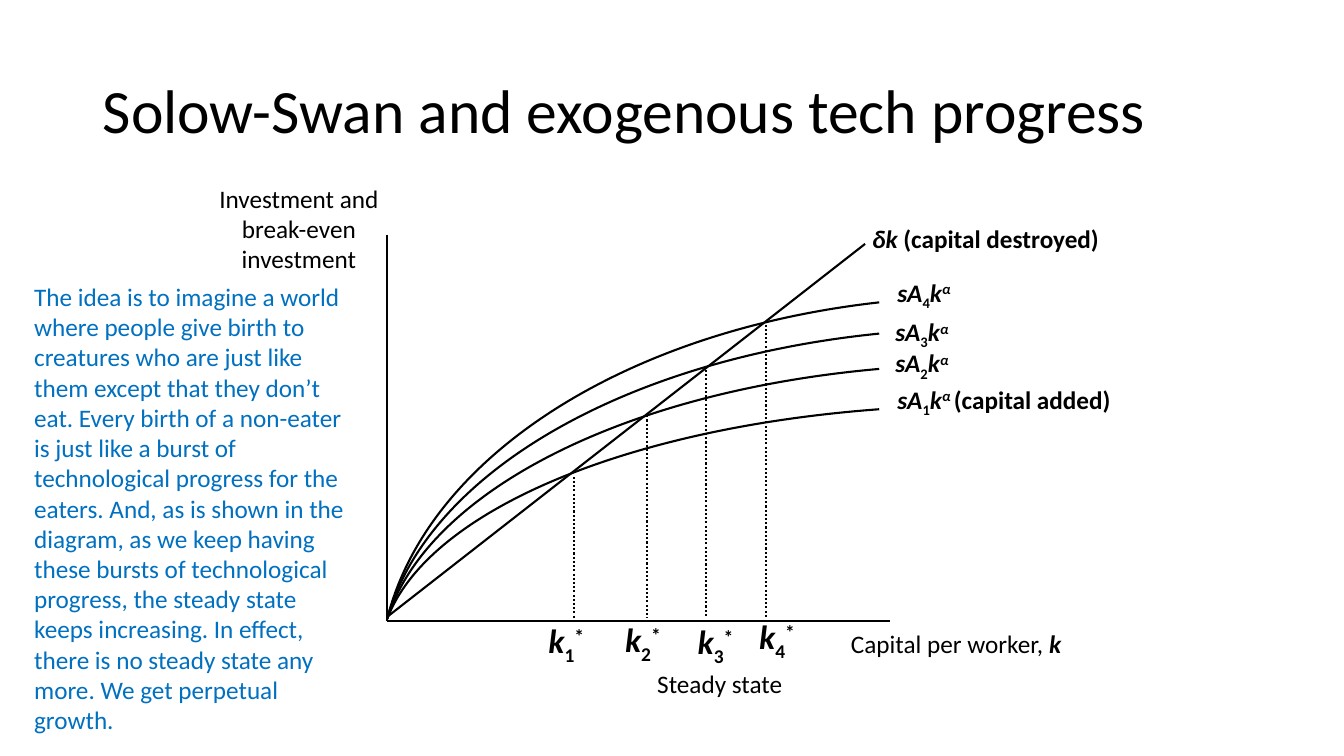
import pptx
import pptx.util
import pptx.dml.color
import pptx.enum.dml
import pptx.enum.shapes
import pptx.enum.text
import pptx.oxml
import pptx.oxml.ns
from pptx.util import Inches

COLORS = {"ink": "000000", "note": "0070C0"}
FONT = "Calibri"
ALIGN = pptx.enum.text.PP_ALIGN
ANCHOR = pptx.enum.text.MSO_ANCHOR
BOLD, ITALIC = {"bold": True}, {"bold": True, "italic": True}
SUBSCRIPT = {"bold": True, "baseline": -25000}
SUPERSCRIPT = {"bold": True, "baseline": 30000}
POWER = {"bold": True, "italic": True, "baseline": 30000}

NOTE = (
    "The idea is to imagine a world where people give birth to creatures who are just "
    "like them except that they don’t eat. Every birth of a non-eater is just like a burst "
    "of technological progress for the eaters. And, as is shown in the diagram, as we keep "
    "having these bursts of technological progress, the steady state keeps increasing. In "
    "effect, there is no steady state any more. We get perpetual growth."
)


def rgb(name):
    return pptx.dml.color.RGBColor.from_string(COLORS[name])


def format_run(run, size, color="ink", bold=False, italic=False, baseline=0):
    run.font.name = FONT
    run.font.size = pptx.util.Pt(size)
    run.font.color.rgb = rgb(color)
    run.font.bold = bold
    run.font.italic = italic
    if baseline:
        run.font._element.set("baseline", str(baseline))


def add_text(slide, box, parts, size=18, color="ink", align=ALIGN.LEFT, inset=False):
    shape = slide.shapes.add_textbox(*map(Inches, box))
    frame = shape.text_frame
    frame.word_wrap = True
    if not inset:
        frame.margin_left = frame.margin_right = frame.margin_top = frame.margin_bottom = 0
        frame.vertical_anchor = ANCHOR.MIDDLE
    paragraph = frame.paragraphs[0]
    paragraph.alignment = align
    for text, style in parts:
        run = paragraph.add_run()
        run.text = text
        format_run(run, size, color, **style)


def add_line(slide, start, end, width=1.5, dotted=False):
    connector = slide.shapes.add_connector(
        pptx.enum.shapes.MSO_CONNECTOR.STRAIGHT, *map(Inches, (*start, *end)))
    connector.line.color.rgb = rgb("ink")
    connector.line.width = pptx.util.Pt(width)
    if dotted:
        connector.line.dash_style = pptx.enum.dml.MSO_LINE.ROUND_DOT
    connector._element.spPr.append(pptx.oxml.parse_xml(
        f'<a:effectLst {pptx.oxml.ns.nsdecls("a")}/>'))


def add_curve(slide, points):
    start, *others = [tuple(map(Inches, point)) for point in points]
    builder = slide.shapes.build_freeform(*start)
    builder.add_line_segments(others, close=False)
    shape = builder.convert_to_shape()
    shape.shadow.inherit = False
    shape.fill.background()
    shape.line.color.rgb = rgb("ink")
    shape.line.width = pptx.util.Pt(1.5)
    segments = shape._element.xpath(".//a:lnTo")
    bezier = pptx.oxml.parse_xml(f'<a:cubicBezTo {pptx.oxml.ns.nsdecls("a")}/>')
    segments[0].addprevious(bezier)
    for segment in segments:
        bezier.append(segment[0])
        segment.getparent().remove(segment)


def add_title(slide, box):
    title = slide.shapes.title
    title.left, title.top, title.width, title.height = map(Inches, box)
    title.text_frame.text = "Solow-Swan and exogenous tech progress"
    title.text_frame.vertical_anchor = ANCHOR.MIDDLE
    paragraph = title.text_frame.paragraphs[0]
    paragraph.alignment = ALIGN.LEFT
    paragraph.line_spacing = 0.9
    format_run(paragraph.runs[0], 44)


def add_axes(slide, box):
    left, top, width, height = box
    bottom = top + height
    add_line(slide, (left, top), (left, bottom), width=1)
    add_line(slide, (left, bottom), (left + width, bottom), width=1)
    add_text(slide, (left - 2.01, top - 0.52, 2.27, 0.91),
             [("Investment and break-even investment", {})], align=ALIGN.CENTER)
    add_text(slide, (left + 4.6, bottom + 0.07, 2.66, 0.3),
             [("Capital per worker, ", {}), ("k", ITALIC)])
    add_text(slide, (left + 2.58, bottom + 0.42, 1.58, 0.4),
             [("Steady state", {})], inset=True)


def add_depreciation(slide, box):
    left, top, width, height = box
    add_line(slide, (left, top + height - 0.04), (left + 4.74, top + 0.09))
    add_text(slide, (left + 4.81, top - 0.11, 3.19, 0.3),
             [("δk ", ITALIC), ("(capital destroyed)", BOLD)])


def add_investment_curves(slide, box):
    left, top, width, height = box
    origin = top + height - 0.02
    curves = [(1.73, 5.06, 1.5), (1.33, 5.04, 1.14), (0.98, 5.04, 0.83), (0.67, 5.06, 0.44)]
    for level, (end, label_left, label_top) in enumerate(curves, start=1):
        peak = top + end
        rise = origin - peak
        add_curve(slide, [(left + 4.88, peak), (left + 2.35, peak + 0.09 * rise),
                          (left + 0.4, peak + 0.49 * rise), (left, origin)])
        parts = [("sA", ITALIC), (str(level), SUBSCRIPT), ("k", ITALIC)]
        if level == 1:
            parts += [("α ", POWER), ("(capital added)", BOLD)]
        else:
            parts += [("α", POWER)]
        label_width = 2.24 if level == 1 else 0.83
        add_text(slide, (left + label_left, top + label_top, label_width, 0.3), parts)


def add_steady_states(slide, box):
    left, top, width, height = box
    bottom = top + height
    states = [(1.85, 2.4, 1.6, 0.02), (2.58, 1.79, 2.36, 0.01),
              (3.16, 1.34, 3.08, 0.03), (3.76, 0.89, 3.69, -0.02)]
    for level, (across, down, label_left, label_drop) in enumerate(states, start=1):
        add_line(slide, (left + across, top + down), (left + across, bottom - 0.03), dotted=True)
        add_text(slide, (left + label_left, bottom + label_drop, 0.44, 0.4),
                 [("k", ITALIC), (str(level), SUBSCRIPT), ("*", SUPERSCRIPT)], size=24)


def add_diagram(slide, box):
    add_axes(slide, box)
    add_depreciation(slide, box)
    add_investment_curves(slide, box)
    add_steady_states(slide, box)


def add_note(slide, box):
    add_text(slide, box, [(NOTE, {})], color="note", inset=True)


def main():
    presentation = pptx.Presentation()
    presentation.slide_width = Inches(13.33)
    presentation.slide_height = Inches(7.5)
    slide = presentation.slides.add_slide(presentation.slide_layouts.get_by_name("Title Only"))
    add_title(slide, (0.92, 0.4, 11.5, 1.45))
    add_diagram(slide, (3.84, 2.33, 4.99, 3.83))
    add_note(slide, (0.24, 2.74, 3.38, 4.64))
    presentation.save("out.pptx")


if __name__ == "__main__":
    main()
